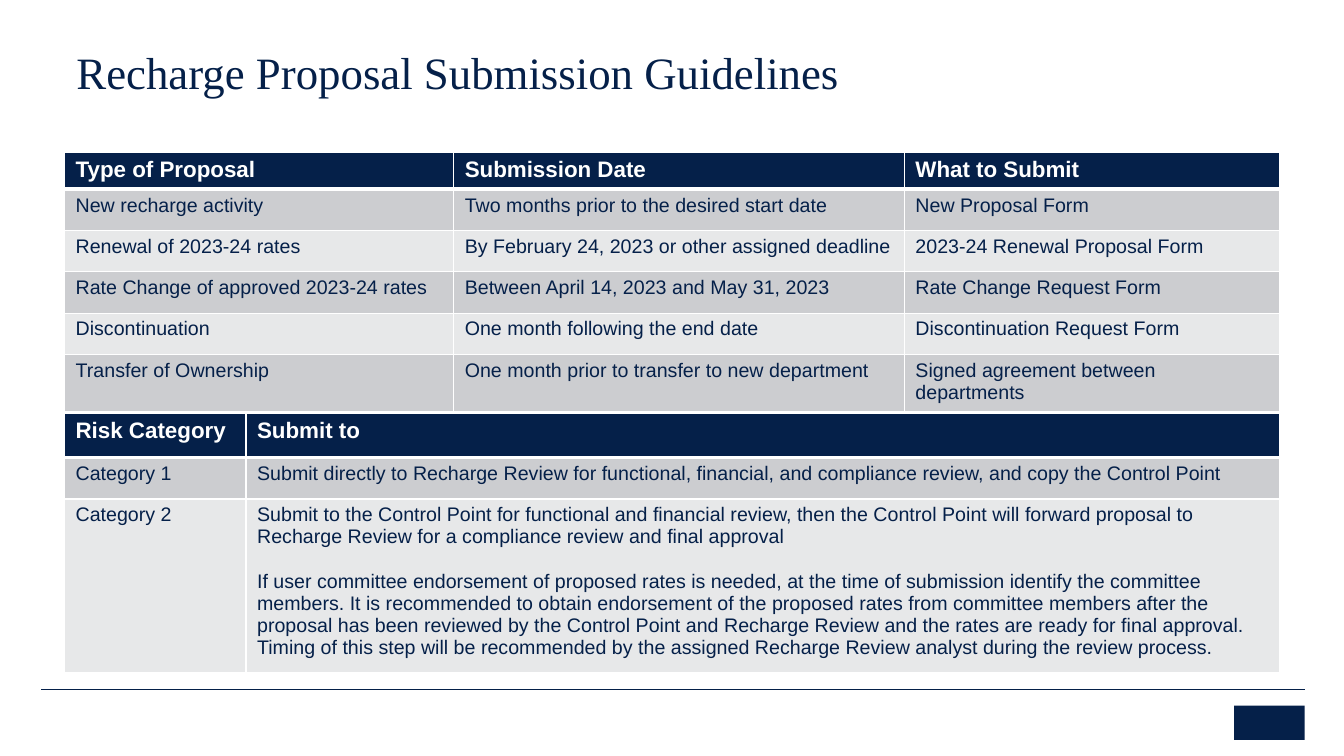
"""Build the recharge proposal submission guidelines slide."""
from lxml.etree import SubElement
from pptx import Presentation
from pptx.dml.color import RGBColor
from pptx.enum.shapes import MSO_CONNECTOR, MSO_SHAPE
from pptx.enum.text import MSO_ANCHOR
from pptx.oxml.ns import qn
from pptx.util import Inches, Pt

NAVY = RGBColor(0x05, 0x20, 0x49)
WHITE = RGBColor(0xFF, 0xFF, 0xFF)
DARK_BAND = RGBColor(0xCC, 0xCD, 0xD0)
LIGHT_BAND = RGBColor(0xE7, 0xE8, 0xE9)

SLIDE_WIDTH, SLIDE_HEIGHT = 13.33, 7.5
TABLE_LEFT, TABLE_WIDTH = 0.64, 12.05
ROW_HEIGHT = 0.41
FOOTER_LINE = {"left": 0.41, "right": 12.94, "top": 6.84}
FOOTER_MARK = (12.24, 7, 0.7, 0.34)
TITLE_BOX = (0.66, 0.46, 11.8, 0.57)

TITLE = "Recharge Proposal Submission Guidelines"
TITLE_FONT = {"name": "Times New Roman", "size": Pt(32), "bold": False}
HEADER_FONT = {"name": "Arial", "size": Pt(16), "bold": True}
BODY_FONT = {"name": "Arial", "size": Pt(14), "bold": False}
PARAGRAPH_GAP = Pt(16)

TABLES = [
    {
        "top": 1.51,
        "column_weights": [386, 447, 372],
        "row_heights": [0.36] + [ROW_HEIGHT] * 5,
        "rows": [
            ["Type of Proposal", "Submission Date", "What to Submit"],
            ["New recharge activity", "Two months prior to the desired start date", "New Proposal Form"],
            ["Renewal of 2023-24 rates", "By February 24, 2023 or other assigned deadline",
             "2023-24 Renewal Proposal Form"],
            ["Rate Change of approved 2023-24 rates", "Between April 14, 2023 and May 31, 2023",
             "Rate Change Request Form"],
            ["Discontinuation", "One month following the end date", "Discontinuation Request Form"],
            ["Transfer of Ownership", "One month prior to transfer to new department",
             "Signed agreement between departments"],
        ],
    },
    {
        "top": 4.1,
        "column_weights": [180, 1025],
        "row_heights": [0.44, ROW_HEIGHT, 4 * ROW_HEIGHT],
        "rows": [
            ["Risk Category", "Submit to"],
            ["Category 1",
             "Submit directly to Recharge Review for functional, financial, and compliance review, "
             "and copy the Control Point"],
            ["Category 2",
             "Submit to the Control Point for functional and financial review, then the Control Point "
             "will forward proposal to Recharge Review for a compliance review and final approval\n"
             "If user committee endorsement of proposed rates is needed, at the time of submission "
             "identify the committee members. It is recommended to obtain endorsement of the proposed "
             "rates from committee members after the proposal has been reviewed by the Control Point "
             "and Recharge Review and the rates are ready for final approval. Timing of this step will "
             "be recommended by the assigned Recharge Review analyst during the review process."],
        ],
    },
]


def format_paragraph(paragraph, font_values, color):
    for name, value in font_values.items():
        setattr(paragraph.font, name, value)
    paragraph.font.color.rgb = color


def add_borders(cell, row_index):
    points = {"lnL": 1, "lnR": 1, "lnT": 3 if row_index == 1 else 1, "lnB": 3 if row_index == 0 else 1}
    properties = cell._tc.get_or_add_tcPr()
    for side, width in points.items():
        border = SubElement(properties, qn(f"a:{side}"), w=str(Pt(width)))
        fill = SubElement(border, qn("a:solidFill"))
        SubElement(fill, qn("a:srgbClr"), val=str(WHITE))


def fill_cell(cell, text, row_index):
    is_header = row_index == 0
    add_borders(cell, row_index)
    cell.fill.solid()
    cell.fill.fore_color.rgb = NAVY if is_header else DARK_BAND if row_index % 2 else LIGHT_BAND
    margins = {"margin_left": 0.11, "margin_right": 0.11, "margin_top": 0.05, "margin_bottom": 0.05}
    for name, value in margins.items():
        setattr(cell, name, Inches(value))
    cell.text_frame.text = text
    for index, paragraph in enumerate(cell.text_frame.paragraphs):
        format_paragraph(paragraph, HEADER_FONT if is_header else BODY_FONT, WHITE if is_header else NAVY)
        if index:
            paragraph.space_before = PARAGRAPH_GAP


def add_guideline_table(slide, content):
    rows, weights, heights = content["rows"], content["column_weights"], content["row_heights"]
    frame = slide.shapes.add_table(
        len(rows), len(weights), Inches(TABLE_LEFT), Inches(content["top"]),
        Inches(TABLE_WIDTH), Inches(sum(heights)))
    table = frame.table
    for column, weight in zip(table.columns, weights):
        column.width = Inches(TABLE_WIDTH * weight / sum(weights))
    for row_index, (row, height, texts) in enumerate(zip(table.rows, heights, rows)):
        row.height = Inches(height)
        for cell, text in zip(row.cells, texts):
            fill_cell(cell, text, row_index)


def add_title(slide):
    frame = slide.shapes.add_textbox(*map(Inches, TITLE_BOX)).text_frame
    frame.word_wrap = True
    frame.vertical_anchor = MSO_ANCHOR.BOTTOM
    frame.text = TITLE
    paragraph = frame.paragraphs[0]
    paragraph.line_spacing = 0.85
    format_paragraph(paragraph, TITLE_FONT, NAVY)


def add_footer(slide):
    left, right, top = (Inches(FOOTER_LINE[name]) for name in ("left", "right", "top"))
    line = slide.shapes.add_connector(MSO_CONNECTOR.STRAIGHT, left, top, right, top)
    line.line.color.rgb = NAVY
    line.line.width = Pt(0.25)
    SubElement(line._element.spPr, qn("a:effectLst"))
    mark = slide.shapes.add_shape(MSO_SHAPE.RECTANGLE, *map(Inches, FOOTER_MARK))
    mark.shadow.inherit = False
    mark.fill.solid()
    mark.fill.fore_color.rgb = NAVY
    mark.line.fill.background()


def main():
    presentation = Presentation()
    presentation.slide_width = Inches(SLIDE_WIDTH)
    presentation.slide_height = Inches(SLIDE_HEIGHT)
    slide = presentation.slides.add_slide(presentation.slide_layouts[6])
    add_footer(slide)
    add_title(slide)
    for content in TABLES:
        add_guideline_table(slide, content)
    presentation.save("out.pptx")


if __name__ == "__main__":
    main()
